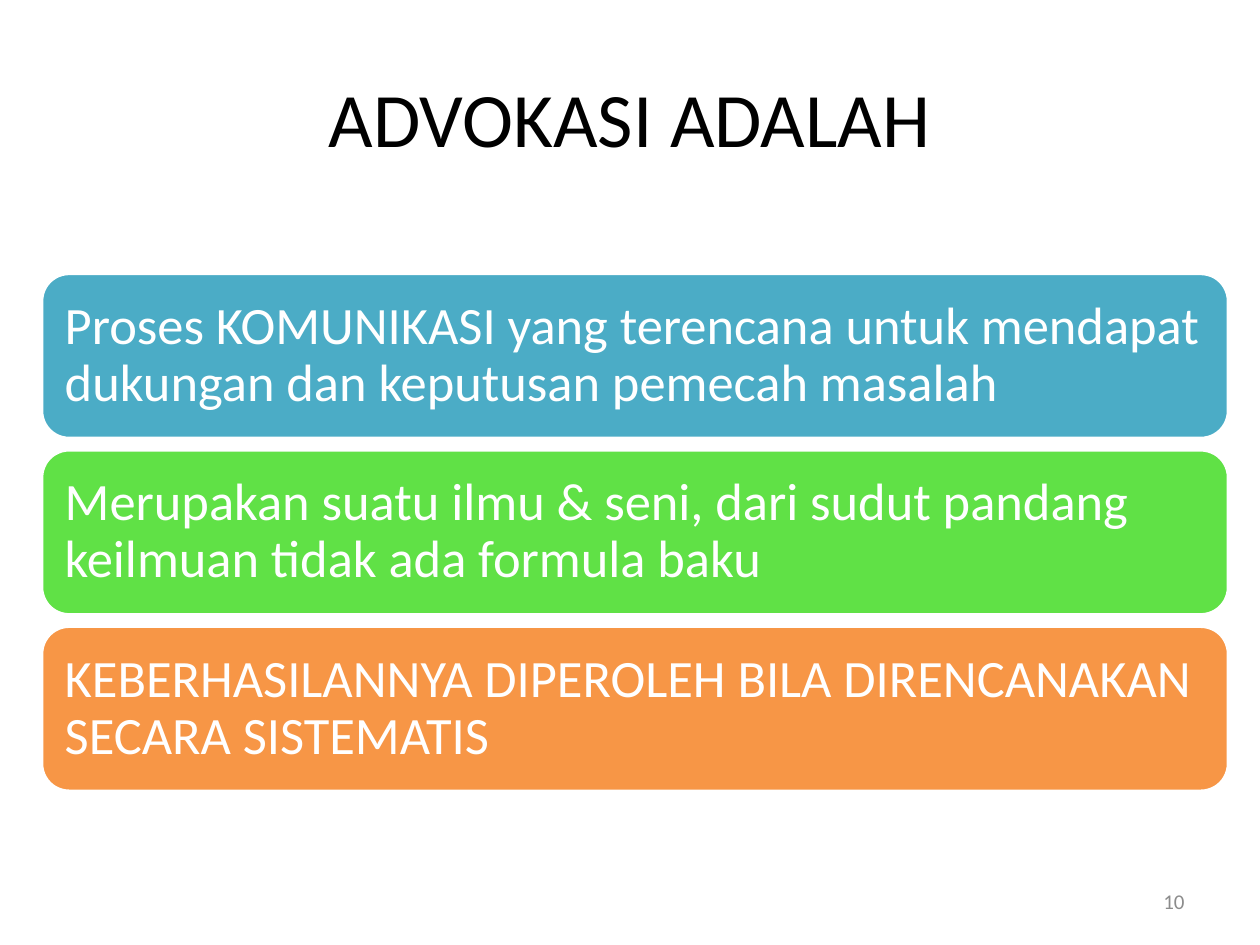
from pptx import Presentation
from pptx.dml.color import RGBColor
from pptx.enum.shapes import MSO_SHAPE as Shape
from pptx.enum.text import MSO_ANCHOR as Anchor, PP_ALIGN as Align
from pptx.util import Inches, Pt

BLACK = RGBColor(0x00, 0x00, 0x00)
WHITE = RGBColor(0xFF, 0xFF, 0xFF)
GRAY = RGBColor(0x8C, 0x8C, 0x8C)
TEAL = RGBColor(0x4B, 0xAC, 0xC6)
GREEN = RGBColor(0x60, 0xE1, 0x46)
ORANGE = RGBColor(0xF7, 0x96, 0x46)

TITLE = "ADVOKASI ADALAH"
PAGE_NUMBER = "10"
STATEMENTS = [
    ("Proses KOMUNIKASI yang terencana untuk mendapat dukungan dan keputusan pemecah masalah", TEAL),
    ("Merupakan suatu ilmu & seni, dari sudut pandang keilmuan tidak ada formula baku", GREEN),
    ("KEBERHASILANNYA DIPEROLEH BILA DIRENCANAKAN SECARA SISTEMATIS", ORANGE),
]

BAR_LEFT, BAR_TOP, BAR_WIDTH, BAR_HEIGHT = 0.33, 2.17, 9.42, 1.31
BAR_STEP = 1.4
BAR_INSET = 0.12


def write(box, text, size, color, align=Align.LEFT, line_spacing=None):
    frame = box.text_frame
    frame.word_wrap = True
    frame.vertical_anchor = Anchor.MIDDLE
    para = frame.paragraphs[0]
    para.alignment = align
    para.line_spacing = line_spacing
    span = para.add_run()
    span.text = text
    span.font.name = "Calibri"
    span.font.size = Pt(size)
    span.font.color.rgb = color


def add_bar(page, top, text, fill):
    bar = page.shapes.add_shape(
        Shape.ROUNDED_RECTANGLE,
        Inches(BAR_LEFT), Inches(top), Inches(BAR_WIDTH), Inches(BAR_HEIGHT),
    )
    bar.shadow.inherit = False
    bar.fill.solid()
    bar.fill.fore_color.rgb = fill
    bar.line.color.rgb = WHITE
    bar.line.width = Pt(2)
    frame = bar.text_frame
    frame.margin_left = frame.margin_right = Inches(BAR_INSET)
    frame.margin_top = frame.margin_bottom = Inches(BAR_INSET)
    write(bar, text, 30, WHITE, line_spacing=0.9)


def main():
    deck = Presentation()
    deck.slide_width, deck.slide_height = Inches(10), Inches(7.5)
    page = deck.slides.add_slide(deck.slide_layouts[6])

    title = page.shapes.add_textbox(Inches(0.5), Inches(0.3), Inches(9), Inches(1.25))
    write(title, TITLE, 44, BLACK, align=Align.CENTER)

    for index, (text, fill) in enumerate(STATEMENTS):
        add_bar(page, BAR_TOP + index * BAR_STEP, text, fill)

    number = page.shapes.add_textbox(Inches(7.17), Inches(6.95), Inches(2.33), Inches(0.4))
    write(number, PAGE_NUMBER, 12, GRAY, align=Align.RIGHT)

    deck.save("out.pptx")


if __name__ == "__main__":
    main()
